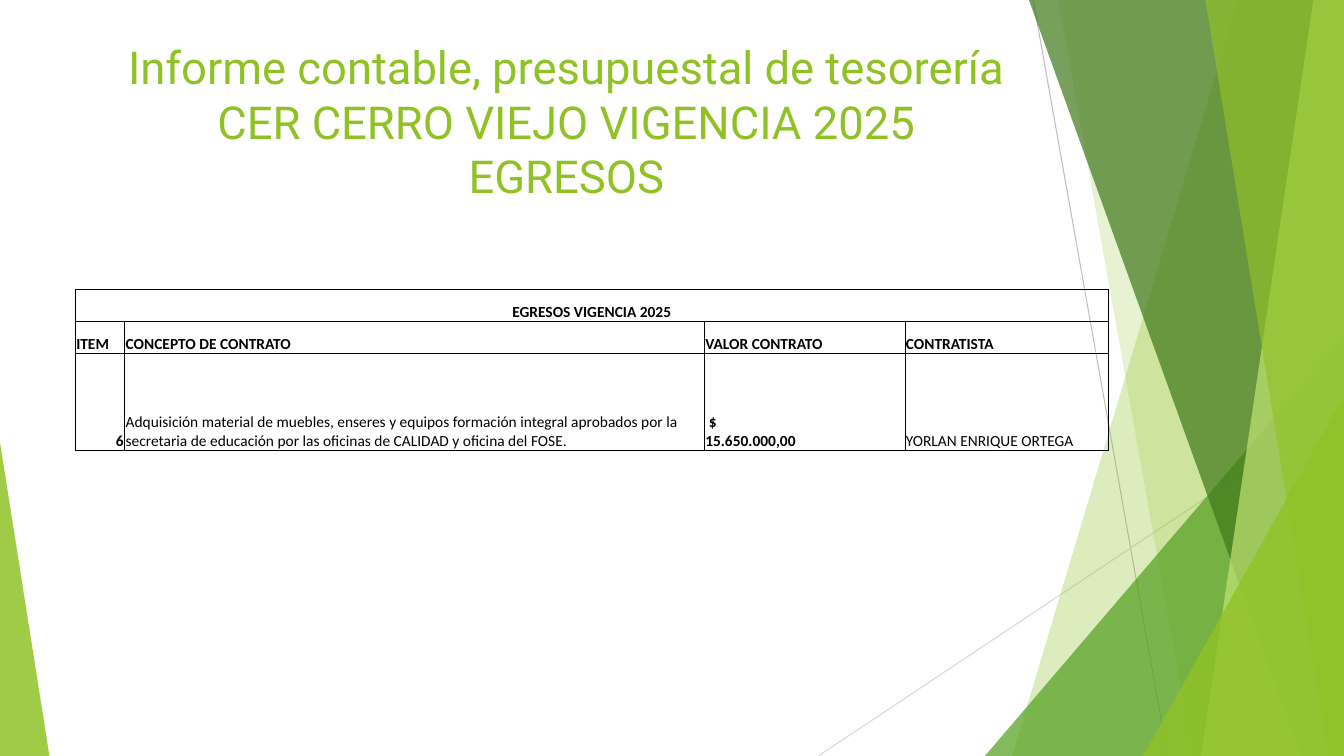
from lxml import etree
from pptx import Presentation
from pptx.dml.color import RGBColor
from pptx.enum.shapes import MSO_CONNECTOR, MSO_SHAPE
from pptx.enum.text import MSO_ANCHOR, PP_ALIGN
from pptx.oxml import parse_xml
from pptx.oxml.ns import nsdecls, qn
from pptx.util import Pt

LINE = MSO_CONNECTOR.STRAIGHT
WEDGE = MSO_SHAPE.ISOSCELES_TRIANGLE
TOP, BOTTOM = MSO_ANCHOR.TOP, MSO_ANCHOR.BOTTOM
LEFT, CENTER, RIGHT = PP_ALIGN.LEFT, PP_ALIGN.CENTER, PP_ALIGN.RIGHT

WIDE, HIGH = 960, 540
LIME = "90C226"
TITLE = ("Informe contable, presupuestal de tesorería "
         "CER CERRO VIEJO VIGENCIA 2025\vEGRESOS")
ROWS = [
    ["EGRESOS VIGENCIA 2025", "", "", ""],
    ["ITEM", "CONCEPTO DE CONTRATO", "VALOR CONTRATO", "CONTRATISTA"],
    ["6",
     "Adquisición material de muebles, enseres y equipos formación integral "
     "aprobados por la secretaria de educación por las oficinas de CALIDAD "
     "y oficina del FOSE.",
     " $\v15.650.000,00", "YORLAN ENRIQUE ORTEGA"],
]


def color(code):
    return RGBColor.from_string(code)


def style(para, font, size, code, bold=False):
    for run in para.runs:
        run.font.name = font
        run.font.size = Pt(size)
        run.font.bold = bold
        run.font.color.rgb = color(code)


def paint(shape, code, alpha):
    """Fill with a see-through colour and no outline."""
    shape.shadow.inherit = False
    shape.line.fill.background()
    shape.fill.solid()
    shape.fill.fore_color.rgb = color(code)
    tint = shape._element.spPr.find(qn("a:solidFill"))[0]
    etree.SubElement(tint, qn("a:alpha")).set("val", str(alpha * 1000))


def ray(slide, x1, y1, x2, y2, code):
    line = slide.shapes.add_connector(LINE, Pt(x1), Pt(y1), Pt(x2), Pt(y2))
    line.line.color.rgb = color(code)
    line.line.width = Pt(0.75)
    etree.SubElement(line._element.spPr, qn("a:effectLst"))


def band(slide, box, top, foot, code, alpha):
    """Full-height band from a slanted left edge to the box's right edge."""
    x, y, w, h = box
    pen = slide.shapes.build_freeform(Pt(x + top), Pt(y))
    pen.add_line_segments([(Pt(x + w), Pt(y)), (Pt(x + w), Pt(y + h)),
                           (Pt(x + foot), Pt(y + h))], close=True)
    paint(pen.convert_to_shape(), code, alpha)


def wedge(slide, box, w, h, tip, code, alpha):
    """Triangle in a bottom corner: tip 0 is left, 1 is right."""
    x = box[0] + tip * (box[2] - w)
    y = box[1] + box[3] - h
    shape = slide.shapes.add_shape(WEDGE, Pt(x), Pt(y), Pt(w), Pt(h))
    shape.adjustments[0] = tip
    paint(shape, code, alpha)


def add_decor(slide, box):
    x, y, w, h = box
    ray(slide, x + 738, y, x + 834, y + h, "BFBFBF")
    ray(slide, x + w, y + 290, x + 584.5, y + h, "D9D9D9")
    band(slide, box, 884.2, 723, LIME, 30)
    band(slide, box, 756, 852, LIME, 20)
    wedge(slide, box, 256.5, 300, 1, "54A021", 72)
    band(slide, box, 735, 929.5, "3F7819", 70)
    band(slide, box, 938.2, 858, "C0E474", 70)
    band(slide, box, 861, 949, LIME, 65)
    wedge(slide, box, 143.5, 257, 1, LIME, 80)
    wedge(slide, box, 35.3, 224, 0, LIME, 85)


def add_title(slide, box):
    shape = slide.shapes.add_textbox(*map(Pt, box))
    frame = shape.text_frame
    frame.word_wrap = True
    frame.vertical_anchor = TOP
    frame.text = TITLE
    para = frame.paragraphs[0]
    para.alignment = CENTER
    style(para, "Roboto", 32.4, LIME)


def edge(cell):
    """Thin black border on all four sides, placed ahead of the fill."""
    props = cell._tc.get_or_add_tcPr()
    for i, side in enumerate(("lnL", "lnR", "lnT", "lnB")):
        props.insert(i, parse_xml(
            f'<a:{side} {nsdecls("a")} w="6350"><a:solidFill>'
            f'<a:srgbClr val="000000"/></a:solidFill></a:{side}>'))


def add_grid(slide, box):
    shape = slide.shapes.add_table(len(ROWS), 4, *map(Pt, box))
    grid = shape.table
    grid.first_row = grid.horz_banding = False
    for col, part in zip(grid.columns, (0.05, 0.56, 0.19, 0.2)):
        col.width = Pt(round(box[2] * part, 2))
    for col, width in zip(grid.columns, (35.3, 414, 143.3, 145.4)):
        col.width = Pt(width)
    for row, height in zip(grid.rows, (22.9, 22.9, box[3] - 45.8)):
        row.height = Pt(height)
    grid.cell(0, 0).merge(grid.cell(0, 3))
    for r, texts in enumerate(ROWS):
        for c, text in enumerate(texts):
            cell = grid.cell(r, c)
            cell.fill.background()
            edge(cell)
            cell.vertical_anchor = BOTTOM
            cell.margin_left = cell.margin_right = cell.margin_top = Pt(0.7)
            cell.margin_bottom = 0
            if not text:
                continue
            cell.text_frame.text = text
            para = cell.text_frame.paragraphs[0]
            para.alignment = {(0, 0): CENTER, (2, 0): RIGHT}.get((r, c), LEFT)
            style(para, "Calibri", 11, "000000", r < 2 or c in (0, 2))


def main():
    deck = Presentation()
    deck.slide_width, deck.slide_height = Pt(WIDE), Pt(HIGH)
    slide = deck.slides.add_slide(deck.slide_layouts[6])
    add_decor(slide, (0, 0, WIDE, HIGH))
    add_title(slide, (66, 24.5, 677, 103.7))
    add_grid(slide, (53.8, 206.7, 738, 115))
    deck.save("out.pptx")


if __name__ == "__main__":
    main()
